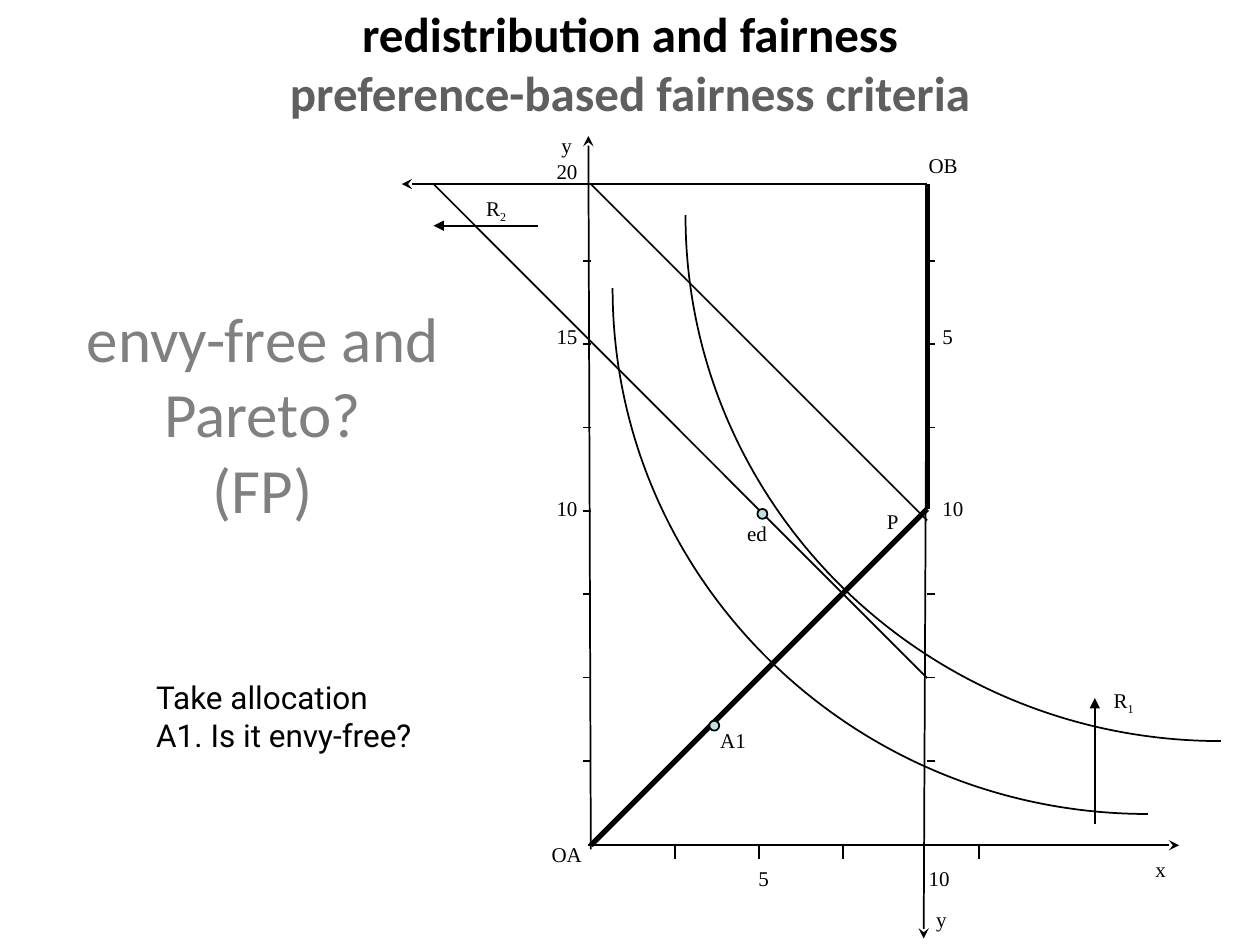
import pptx
import pptx.dml.color
import pptx.enum.shapes
import pptx.enum.text
import pptx.oxml
import pptx.oxml.ns
import pptx.util

Cm, Pt = pptx.util.Cm, pptx.util.Pt
COLORS = {"ink": "000000", "title": "808080", "subtitle": "5F5F5F", "dot": "BBE0E3"}
NAMESPACE = pptx.oxml.ns.nsdecls("a")
SERIF = "Times New Roman"


def rgb(name):
    return pptx.dml.color.RGBColor.from_string(COLORS[name])


def add_text(left, top, width, height, lines, font, size, wrap=True, centred=False):
    """Add a text box; lines is a list of lines, each a list of (text, colour, bold, baseline)."""
    box = page.shapes.add_textbox(Cm(left), Cm(top), Cm(width), Cm(height))
    frame = box.text_frame
    frame.word_wrap = wrap
    if centred:
        frame.vertical_anchor = pptx.enum.text.MSO_ANCHOR.MIDDLE
    else:
        frame.auto_size = pptx.enum.text.MSO_AUTO_SIZE.SHAPE_TO_FIT_TEXT
    para = frame.paragraphs[0]
    para.alignment = pptx.enum.text.PP_ALIGN.CENTER if centred else pptx.enum.text.PP_ALIGN.LEFT
    for number, line in enumerate(lines):
        if number:
            para.add_line_break()
        for text, color, bold, baseline in line:
            span = para.add_run()
            span.text = text
            span.font.name = font
            span.font.size = Pt(size)
            span.font.bold = bold
            span.font.color.rgb = rgb(color)
            if baseline:
                span._r.get_or_add_rPr().set("baseline", str(baseline))


deck = pptx.Presentation()
deck.slide_width, deck.slide_height = Cm(25.4), Cm(19.05)
page = deck.slides.add_slide(deck.slide_layouts[6])

# Headings and question
add_text(1.27, -0.33, 22.86, 3.18,
         [[("redistribution and fairness", "ink", True, 0)],
          [("preference-based fairness criteria", "subtitle", True, 0)]],
         "Calibri", 28, centred=True)
add_text(0.89, 4.32, 8.81, 8,
         [[("envy-free and Pareto?", "title", False, 0)], [("(FP)", "title", False, 0)]],
         "Calibri", 36, centred=True)
add_text(2.9, 13.54, 5.79, 1.8,
         [[("Take allocation A1. Is it envy-free?", "ink", False, 0)]], "Roboto", 18)

# Edgeworth box: corners of the diagram
left, right, top, bottom = 11.91, 18.69, 3.71, 17.04
tick = 0.15
lines = [  # x1, y1, x2, y2, width, arrowhead
    (11.86, bottom, 23.77, bottom, 1, "stealth"),
    (left, 17.12, 11.86, 2.74, 1, "stealth"),
    (right, top, 18.62, 18.92, 1, "stealth"),
    (right, top, 8.1, top, 1, "stealth"),
    (left, bottom, right, 10.26, 3, None),
    (right, 10.26, right, top, 3, None),
    (right, 10.49, left, top, 1, None),
    (right, 13.67, 8.74, top, 1, None),
    (10.85, 4.55, 8.74, 4.55, 1, "triangle"),
    (22.07, 16.61, 22.07, 14.07, 1, "triangle"),
]
for step in range(7):
    y = 15.34 - 1.68 * step
    lines.append((left - tick, y, left, y, 1, None))
    if step != 3:  # the contract curve bends at this height
        lines.append((right, y, right + tick, y, 1, None))
for x in (13.61, 15.3, 16.99, 19.74):
    lines.append((x, bottom + 0.28, x, bottom, 1, None))

for x1, y1, x2, y2, width, head in lines:
    connector = page.shapes.add_connector(
        pptx.enum.shapes.MSO_CONNECTOR.STRAIGHT, Cm(x1), Cm(y1), Cm(x2), Cm(y2))
    connector.line.color.rgb = rgb("ink")
    connector.line.width = Pt(width)
    if head:
        connector.line._get_or_add_ln().append(
            pptx.oxml.parse_xml(f'<a:tailEnd {NAMESPACE} type="{head}"/>'))
    connector._element.spPr.append(pptx.oxml.parse_xml(f"<a:effectLst {NAMESPACE}/>"))

# Indifference curves: each is one Bezier segment, the second shifted from the first
curve_points = [(13.82, 4.34), (13.82, 10.19), (18.64, 14.94), (24.61, 14.94)]
for shift in (0, 1.47):
    start, *others = [(Cm(x - shift), Cm(y + shift)) for x, y in curve_points]
    builder = page.shapes.build_freeform(*start)
    builder.add_line_segments(others, close=False)
    curve = builder.convert_to_shape()
    curve.shadow.inherit = False
    curve.fill.background()
    curve.line.color.rgb = rgb("ink")
    curve.line.width = Pt(1)
    outline = curve._element.spPr.find(".//" + pptx.oxml.ns.qn("a:path"))
    bezier = pptx.oxml.parse_xml(f"<a:cubicBezTo {NAMESPACE}/>")
    for segment in outline.findall(pptx.oxml.ns.qn("a:lnTo")):
        bezier.append(segment[0])
        outline.remove(segment)
    outline.append(bezier)

# Allocations
for x, y in ((15.27, 10.26), (14.3, 14.53)):
    dot = page.shapes.add_shape(pptx.enum.shapes.MSO_SHAPE.FLOWCHART_CONNECTOR,
                                Cm(x), Cm(y), Cm(0.2), Cm(0.2))
    dot.shadow.inherit = False
    dot.fill.solid()
    dot.fill.fore_color.rgb = rgb("dot")
    dot.line.color.rgb = rgb("ink")
    dot.line.width = Pt(1)

# Labels: text, subscript, left, top, width
labels = [
    ("20", "", 10.97, 3.07, 0.94),
    ("15", "", 10.97, 6.4, 0.94),
    ("10", "", 10.97, 9.86, 0.94),
    ("5", "", 18.75, 6.4, 0.71),
    ("10", "", 18.75, 9.86, 0.94),
    ("5", "", 15.04, 17.32, 1.12),
    ("10", "", 18.47, 17.32, 1.12),
    ("y", "", 11.07, 2.54, 0.71),
    ("x", "", 23.04, 17.15, 0.71),
    ("y", "", 18.62, 18.16, 0.71),
    ("OA", "", 10.87, 16.84, 1.12),
    ("OB", "", 18.47, 2.95, 1.09),
    ("P", "", 17.63, 10.13, 0.74),
    ("ed", "", 14.81, 10.36, 0.91),
    ("A1", "", 14.27, 14.55, 1.04),
    ("R", "2", 9.55, 3.81, 0.94),
    ("R", "1", 22.2, 13.74, 0.94),
]
for text, subscript, x, y, width in labels:
    spans = [(text, "ink", False, 0)]
    if subscript:
        spans.append((subscript, "ink", False, -25000))
    add_text(x, y, width, 0.76, [spans], SERIF, 12, wrap=False)

deck.save("out.pptx")
